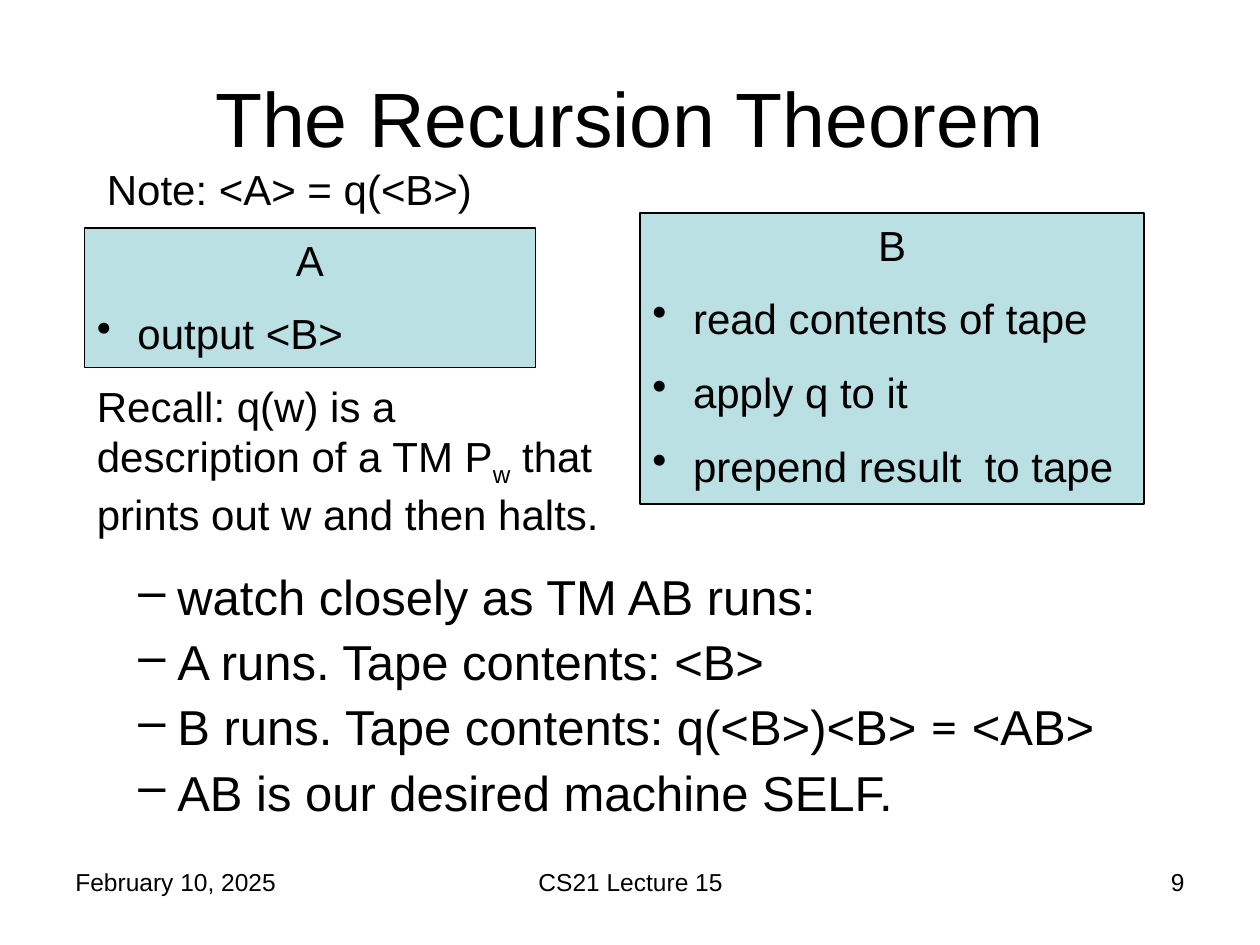
import dataclasses

import pptx
import pptx.dml.color
import pptx.enum.shapes
import pptx.enum.text
import pptx.oxml.ns
import pptx.util
from lxml import etree
from pptx.util import Inches, Pt

BLACK = pptx.dml.color.RGBColor(0, 0, 0)
PALE_TEAL = pptx.dml.color.RGBColor(0xBB, 0xE0, 0xE3)
ALIGN = pptx.enum.text.PP_ALIGN
ANCHOR = pptx.enum.text.MSO_ANCHOR


@dataclasses.dataclass
class Area:
    left: float
    top: float
    width: float
    height: float

    def lengths(self):
        return [Inches(value) for value in dataclasses.astuple(self)]


@dataclasses.dataclass
class Label:
    area: Area
    text: str
    size: int
    align: ALIGN = ALIGN.LEFT
    anchor: ANCHOR = ANCHOR.TOP


@dataclasses.dataclass
class Machine:
    area: Area
    name: str
    steps: list[str]


LABELS = [
    Label(Area(0.5, 6.83, 2.33, 0.52), "February 10, 2025", 14),
    Label(Area(3.42, 6.83, 3.17, 0.52), "CS21 Lecture 15", 14, ALIGN.CENTER),
    Label(Area(7.17, 6.83, 2.33, 0.52), "9", 14, ALIGN.RIGHT),
    Label(Area(0.5, 0.3, 9, 1.25), "The Recursion Theorem", 44, ALIGN.CENTER, ANCHOR.MIDDLE),
    Label(Area(0.75, 1.25, 3.67, 0.5), "Note: <A> = q(<B>)", 24),
]
MACHINES = [
    Machine(Area(0.67, 1.81, 3.58, 1.11), "A", [" output <B>"]),
    Machine(
        Area(5.08, 1.69, 4, 2.31),
        "B",
        [" read contents of tape", " apply q to it", " prepend result  to tape"],
    ),
]
RUN_STEPS = [
    ["watch closely as TM AB runs:"],
    ["A runs. Tape contents: <B>"],
    ["B runs. Tape contents: q(<B>)<B> ", "=", " <AB>"],
    ["AB is our desired machine SELF."],
]


def add_span(para, text: str, size: int, font: str = "Arial"):
    span = para.add_run()
    span.text = text
    span.font.size = Pt(size)
    span.font.name = font
    span.font.color.rgb = BLACK
    return span


def set_bullet(para, mark: str, margin: float, hanging: float) -> None:
    properties = para._p.get_or_add_pPr()
    properties.set("marL", str(Inches(margin)))
    properties.set("indent", str(-Inches(hanging)))
    bullet = etree.SubElement(properties, pptx.oxml.ns.qn("a:buChar"))
    bullet.set("char", mark)


def add_text_box(page, area: Area):
    box = page.shapes.add_textbox(*area.lengths())
    box.text_frame.word_wrap = True
    return box.text_frame


def add_label(page, label: Label) -> None:
    frame = add_text_box(page, label.area)
    frame.vertical_anchor = label.anchor
    para = frame.paragraphs[0]
    para.alignment = label.align
    add_span(para, label.text, label.size)


def add_machine(page, machine: Machine) -> None:
    """Draw a filled box with a centred name above bulleted steps."""
    box = page.shapes.add_shape(
        pptx.enum.shapes.MSO_SHAPE.RECTANGLE, *machine.area.lengths()
    )
    box.shadow.inherit = False
    box.fill.solid()
    box.fill.fore_color.rgb = PALE_TEAL
    box.line.color.rgb = BLACK
    box.line.width = Pt(0.75)
    frame = box.text_frame
    frame.word_wrap = True
    frame.vertical_anchor = ANCHOR.TOP
    heading = frame.paragraphs[0]
    heading.alignment = ALIGN.CENTER
    add_span(heading, machine.name, 24)
    for step in machine.steps:
        para = frame.add_paragraph()
        para.alignment = ALIGN.LEFT
        para.space_before = Pt(13.3)
        set_bullet(para, "•", 0.23, 0.23)
        add_span(para, step, 24)


def add_run_steps(page) -> None:
    frame = add_text_box(page, Area(0.5, 4.5, 9, 2.2))
    for index, parts in enumerate(RUN_STEPS):
        para = frame.add_paragraph() if index else frame.paragraphs[0]
        para.level = 1
        para.line_spacing = 0.9
        para.space_before = Pt(7 if index else 0)
        set_bullet(para, "–", 0.81, 0.31)
        for part in parts:
            add_span(para, part, 28, "Lato" if part == "=" else "Arial")


def add_recall(page) -> None:
    para = add_text_box(page, Area(0.67, 2.97, 4.25, 1.3)).paragraphs[0]
    add_span(para, "Recall: q(w) is a description of a TM P", 24)
    subscript = add_span(para, "w", 24)
    subscript._r.get_or_add_rPr().set("baseline", "-25000")
    add_span(para, " that prints out w and then halts.", 24)


def main() -> None:
    deck = pptx.Presentation()
    deck.slide_width, deck.slide_height = Inches(10), Inches(7.5)
    page = deck.slides.add_slide(deck.slide_layouts[6])
    for label in LABELS:
        add_label(page, label)
    add_run_steps(page)
    for machine in MACHINES:
        add_machine(page, machine)
    add_recall(page)
    deck.save("out.pptx")


if __name__ == "__main__":
    main()
